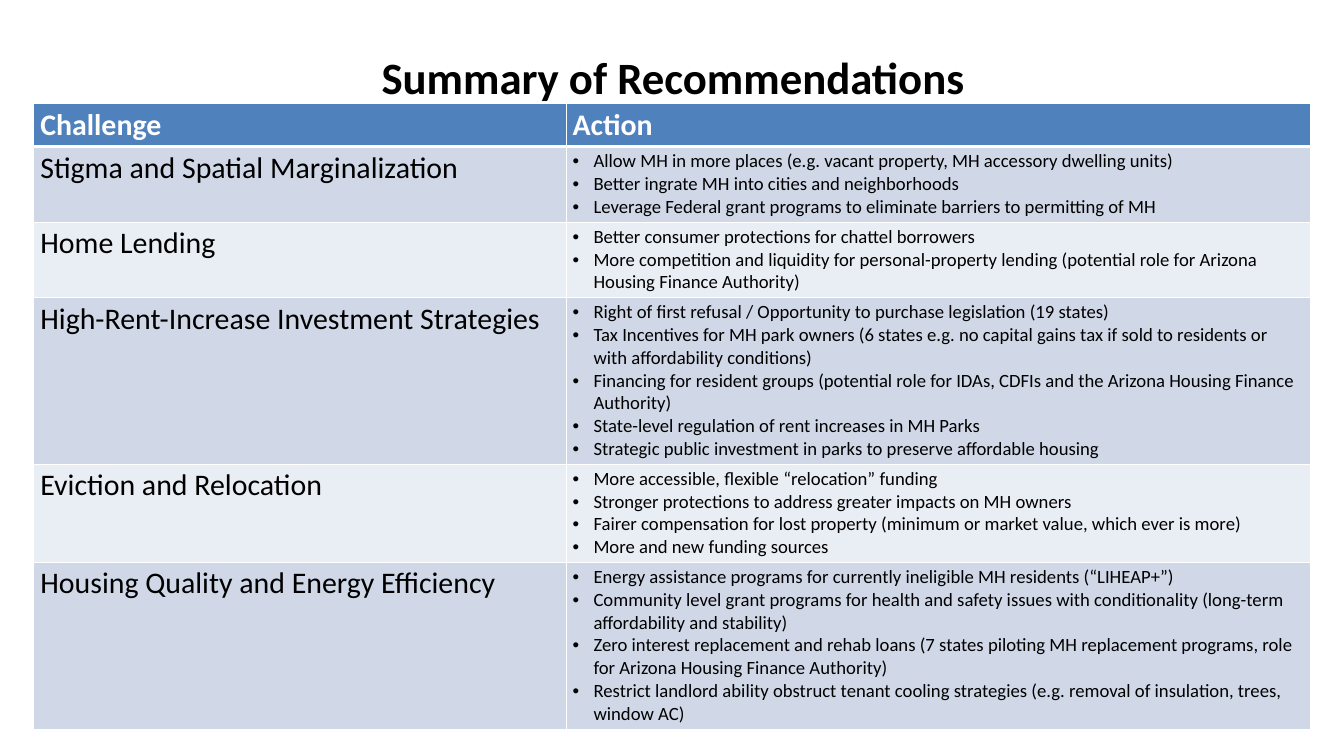
from lxml.etree import SubElement
from pptx import Presentation
from pptx.dml.color import RGBColor
from pptx.enum.text import PP_ALIGN
from pptx.oxml.ns import qn
from pptx.util import Cm, Pt

WHITE = RGBColor(0xFF, 0xFF, 0xFF)
BLACK = RGBColor(0x00, 0x00, 0x00)
HEADER_BLUE = RGBColor(0x4F, 0x81, 0xBD)
BANDS = [RGBColor(0xD0, 0xD8, 0xE8), RGBColor(0xE9, 0xED, 0xF4)]
FONT = "Calibri"

HEADINGS = ["Challenge", "Action"]
RECOMMENDATIONS = [
    ("Stigma and Spatial Marginalization", [
        "Allow MH in more places (e.g. vacant property, MH accessory dwelling units)",
        "Better ingrate MH into cities and neighborhoods",
        "Leverage Federal grant programs to eliminate barriers to permitting of MH",
    ]),
    ("Home Lending", [
        "Better consumer protections for chattel borrowers",
        "More competition and liquidity for personal-property lending "
        "(potential role for Arizona Housing Finance Authority)",
    ]),
    ("High-Rent-Increase Investment Strategies", [
        "Right of first refusal / Opportunity to purchase legislation (19 states)",
        "Tax Incentives for MH park owners (6 states e.g. no capital gains tax "
        "if sold to residents or with affordability conditions)",
        "Financing for resident groups (potential role for IDAs, CDFIs and the "
        "Arizona Housing Finance Authority)",
        "State-level regulation of rent increases in MH Parks",
        "Strategic public investment in parks to preserve affordable housing",
    ]),
    ("Eviction and Relocation", [
        "More accessible, flexible “relocation” funding",
        "Stronger protections to address greater impacts on MH owners",
        "Fairer compensation for lost property (minimum or market value, "
        "which ever is more)",
        "More and new funding sources",
    ]),
    ("Housing Quality and Energy Efficiency", [
        "Energy assistance programs for currently ineligible MH residents (“LIHEAP+”)",
        "Community level grant programs for health and safety issues with "
        "conditionality (long-term affordability and stability)",
        "Zero interest replacement and rehab loans (7 states piloting MH "
        "replacement programs, role for Arizona Housing Finance Authority)",
        "Restrict landlord ability obstruct tenant cooling strategies "
        "(e.g. removal of insulation, trees, window AC)",
    ]),
]


def add_bullet(para):
    properties = para._p.get_or_add_pPr()
    properties.set("marL", str(Cm(0.79)))
    properties.set("indent", str(-Cm(0.79)))
    SubElement(properties, qn("a:buFont"), typeface="Arial")
    SubElement(properties, qn("a:buChar"), char="•")


def write_text(frame, lines, size=32, color=BLACK, bold=False, bullet=False,
               align=PP_ALIGN.LEFT, spacing=None):
    for index, line in enumerate(lines):
        para = frame.paragraphs[0] if index == 0 else frame.add_paragraph()
        if bullet:
            add_bullet(para)
        para.alignment = align
        if spacing:
            para.line_spacing = spacing
        span = para.add_run()
        span.text = line
        span.font.name = FONT
        span.font.size = Pt(size)
        span.font.bold = bold
        span.font.color.rgb = color


def set_borders(cell, top=1, bottom=1):
    properties = cell._tc.get_or_add_tcPr()
    for side, width in [("L", 1), ("R", 1), ("T", top), ("B", bottom)]:
        line = SubElement(properties, qn(f"a:ln{side}"), w=str(Pt(width)))
        fill = SubElement(line, qn("a:solidFill"))
        SubElement(fill, qn("a:srgbClr"), val=str(WHITE))


def fill_cell(cell, lines, background, top=1, bottom=1, **text_format):
    set_borders(cell, top, bottom)
    cell.fill.solid()
    cell.fill.fore_color.rgb = background
    write_text(cell.text_frame, lines, **text_format)


def add_recommendation_table(page):
    frame = page.shapes.add_table(len(RECOMMENDATIONS) + 1, len(HEADINGS),
                                  Cm(1.27), Cm(3.91), Cm(48.26), Cm(23.19))
    table = frame.table
    for column, width in zip(table.columns, [20.12, 28.14]):
        column.width = Cm(width)
    # Rows grow to fit their text
    for row in table.rows:
        row.height = Cm(1.04)
    frame.height = Cm(23.19)

    for column, heading in enumerate(HEADINGS):
        fill_cell(table.cell(0, column), [heading], HEADER_BLUE, bottom=3,
                  color=WHITE, bold=True)
    for row, (challenge, actions) in enumerate(RECOMMENDATIONS, start=1):
        band = BANDS[(row - 1) % 2]
        top = 3 if row == 1 else 1
        fill_cell(table.cell(row, 0), [challenge], band, top=top)
        fill_cell(table.cell(row, 1), actions, band, top=top, size=20, bullet=True)


def add_title(page, text):
    box = page.shapes.add_textbox(Cm(13.13), Cm(0.74), Cm(25.4), Cm(3.02))
    frame = box.text_frame
    frame.word_wrap = True
    # A wider right inset centres the title on the slide
    frame.margin_right = Cm(1.02)
    write_text(frame, [text], size=48, bold=True, align=PP_ALIGN.CENTER, spacing=1.5)


def main():
    deck = Presentation()
    deck.slide_width, deck.slide_height = Cm(50.8), Cm(28.58)
    page = deck.slides.add_slide(deck.slide_layouts[6])
    add_recommendation_table(page)
    add_title(page, "Summary of Recommendations")
    deck.save("out.pptx")


if __name__ == "__main__":
    main()
